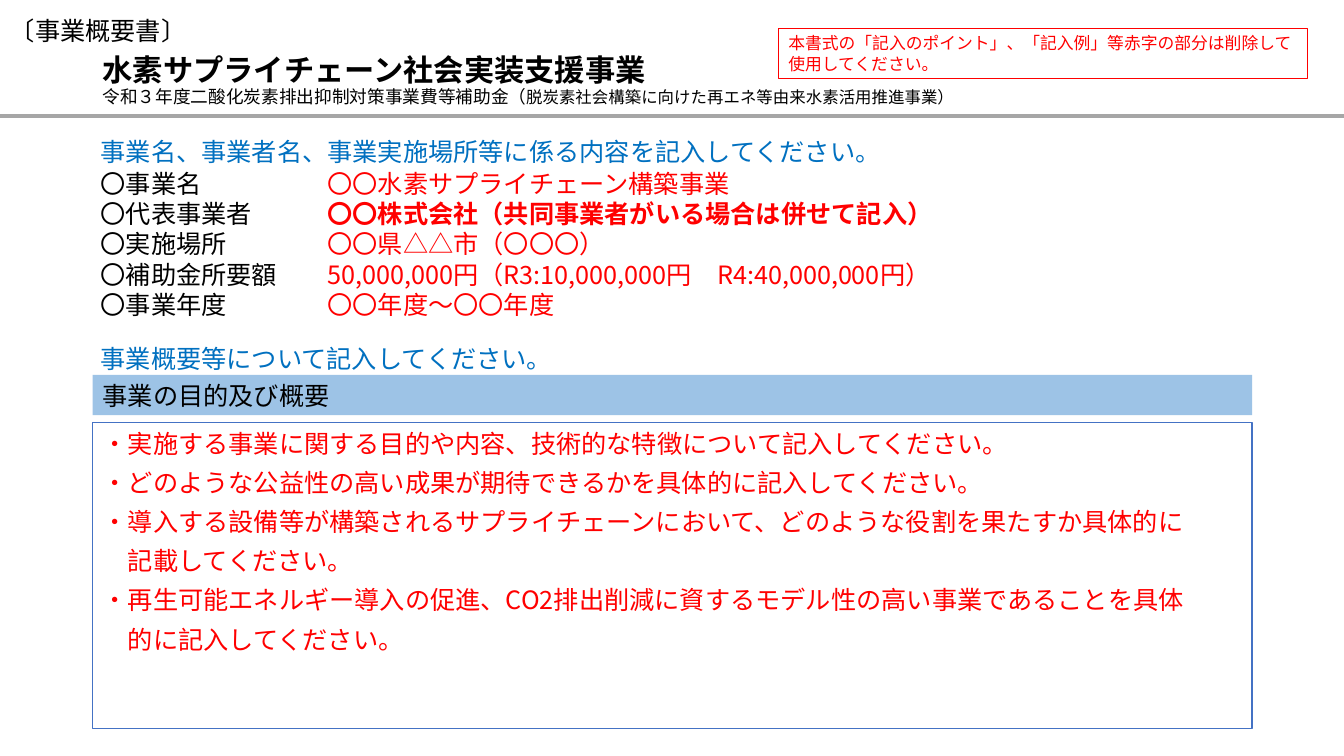
from pptx import Presentation
from pptx import util as u
from pptx.dml.color import RGBColor
from pptx.enum import shapes, text
from pptx.oxml.xmlchemy import OxmlElement

FONT = "Noto Sans CJK JP"
BLACK = RGBColor(0x00, 0x00, 0x00)
RED = RGBColor(0xFF, 0x00, 0x00)
BLUE = RGBColor(0x00, 0x70, 0xC0)
BAND = RGBColor(0x9D, 0xC3, 0xE6)
FRAME = RGBColor(0x44, 0x72, 0xC4)
RULE = RGBColor(0xA6, 0xA6, 0xA6)

WIDTH, HEIGHT = 13.33, 7.5
MARGIN, CONTENT_WIDTH = 0.92, 11.5
LINE_HEIGHT = 0.4
VALUE_COLUMN = 2.25
BULLET_INDENT = 0.25

SUMMARY = [
    ("〇事業名", "〇〇水素サプライチェーン構築事業", False),
    ("〇代表事業者", "〇〇株式会社（共同事業者がいる場合は併せて記入）", True),
    ("〇実施場所", "〇〇県△△市（〇〇〇）", False),
    ("〇補助金所要額", "50,000,000円（R3:10,000,000円　R4:40,000,000円）", False),
    ("〇事業年度", "〇〇年度～〇〇年度", False),
]
POINTS = [
    "・実施する事業に関する目的や内容、技術的な特徴について記入してください。",
    "・どのような公益性の高い成果が期待できるかを具体的に記入してください。",
    "・導入する設備等が構築されるサプライチェーンにおいて、どのような役割を果たすか具体的に",
    "記載してください。",
    "・再生可能エネルギー導入の促進、CO2排出削減に資するモデル性の高い事業であることを具体",
    "的に記入してください。",
]


def add_span(para, words, size=18, color=BLACK, bold=False):
    span = para.add_run()
    span.text = words
    span.font.name = FONT
    span.font.size = u.Pt(size)
    span.font.bold = bold
    span.font.color.rgb = color
    east_asian = OxmlElement("a:ea")
    east_asian.set("typeface", FONT)
    span.font._element.find("{*}latin").addnext(east_asian)


def add_paras(frame, count):
    """Return the frame's paragraphs after bringing them up to count."""
    while len(frame.paragraphs) < count:
        frame.add_paragraph()
    for para in frame.paragraphs:
        para.alignment = text.PP_ALIGN.LEFT
    return frame.paragraphs


def add_text(page, box, anchor=text.MSO_ANCHOR.TOP):
    frame = page.shapes.add_textbox(*map(u.Inches, box)).text_frame
    frame.word_wrap = True
    frame.vertical_anchor = anchor
    return frame


def add_panel(page, box, fill=None, line=None, line_width=1,
              anchor=text.MSO_ANCHOR.TOP):
    panel = page.shapes.add_shape(
        shapes.MSO_SHAPE.RECTANGLE, *map(u.Inches, box))
    panel.shadow.inherit = False
    if fill is None:
        panel.fill.background()
    else:
        panel.fill.solid()
        panel.fill.fore_color.rgb = fill
    if line is None:
        panel.line.fill.background()
    else:
        panel.line.color.rgb = line
        panel.line.width = u.Pt(line_width)
    panel.text_frame.word_wrap = True
    panel.text_frame.vertical_anchor = anchor
    return panel.text_frame


def add_label(page, box, words, color=BLACK):
    add_span(add_paras(add_text(page, box), 1)[0], words, color=color)


def add_title(page, box):
    heading, subsidy = add_paras(
        add_text(page, box, text.MSO_ANCHOR.MIDDLE), 2)
    heading.line_spacing = subsidy.line_spacing = 0.9
    add_span(heading, "水素サプライチェーン社会実装支援事業", 21.6, bold=True)
    add_span(subsidy, "令和３年度二酸化炭素排出抑制対策事業費等補助金（", 12.6)
    add_span(subsidy, "脱炭素社会構築に向けた再エネ等由来水素活用推進事業）", 11.7)


def add_rule(page, top):
    rule = page.shapes.add_connector(
        shapes.MSO_CONNECTOR.STRAIGHT,
        0, u.Inches(top), u.Inches(WIDTH), u.Inches(top))
    rule.line.color.rgb = RULE
    rule.line.width = u.Pt(2.5)
    rule._element.spPr.append(OxmlElement("a:effectLst"))


def add_notice(page, box):
    frame = add_panel(page, box, line=RED, line_width=0.75)
    add_span(add_paras(frame, 1)[0],
             "本書式の「記入のポイント」、「記入例」等赤字の部分は削除して使用してください。",
             12, RED)


def add_summary(page, box):
    """Place labels and values in two columns parted by a tab stop."""
    paras = add_paras(add_text(page, box), len(SUMMARY))
    for para, (label, value, bold) in zip(paras, SUMMARY):
        stops = OxmlElement("a:tabLst")
        stop = OxmlElement("a:tab")
        stop.set("pos", str(u.Inches(VALUE_COLUMN)))
        stop.set("algn", "l")
        stops.append(stop)
        para._p.get_or_add_pPr().append(stops)
        add_span(para, label + "\t")
        add_span(para, value, color=RED, bold=bold)


def add_purpose(page, box):
    """Place the heading band with the framed points below it."""
    left, top, width, height = box
    band = add_panel(page, (left, top, width, LINE_HEIGHT), fill=BAND,
                     anchor=text.MSO_ANCHOR.MIDDLE)
    add_span(add_paras(band, 1)[0], "事業の目的及び概要")
    offset = LINE_HEIGHT + 0.07
    frame = add_panel(page, (left, top + offset, width, height - offset),
                      line=FRAME)
    for para, point in zip(add_paras(frame, len(POINTS)), POINTS):
        para.line_spacing = u.Pt(22)
        para.space_before = u.Pt(6)
        if not point.startswith("・"):
            para._p.get_or_add_pPr().set("marL", str(u.Inches(BULLET_INDENT)))
        add_span(para, point, color=RED)


def add_overview(deck):
    page = deck.slides.add_slide(deck.slide_layouts[6])
    text_left = MARGIN - 0.02
    add_title(page, (MARGIN, 0.49, CONTENT_WIDTH, 0.64))
    add_rule(page, 1.15)
    add_summary(page, (text_left, 1.62, CONTENT_WIDTH, 1.62))
    add_purpose(page, (MARGIN, 3.72, CONTENT_WIDTH, 3.51))
    add_label(page, (text_left, 1.3, 9.15, LINE_HEIGHT),
              "事業名、事業者名、事業実施場所等に係る内容を記入してください。", BLUE)
    add_label(page, (text_left, 3.36, 9.15, LINE_HEIGHT),
              "事業概要等について記入してください。", BLUE)
    add_label(page, (0, 0.1, 2.09, LINE_HEIGHT), "〔事業概要書〕")
    add_notice(page, (7.72, 0.28, 5.25, 0.5))


def main():
    deck = Presentation()
    deck.slide_width, deck.slide_height = u.Inches(WIDTH), u.Inches(HEIGHT)
    add_overview(deck)
    deck.save("out.pptx")


if __name__ == "__main__":
    main()
